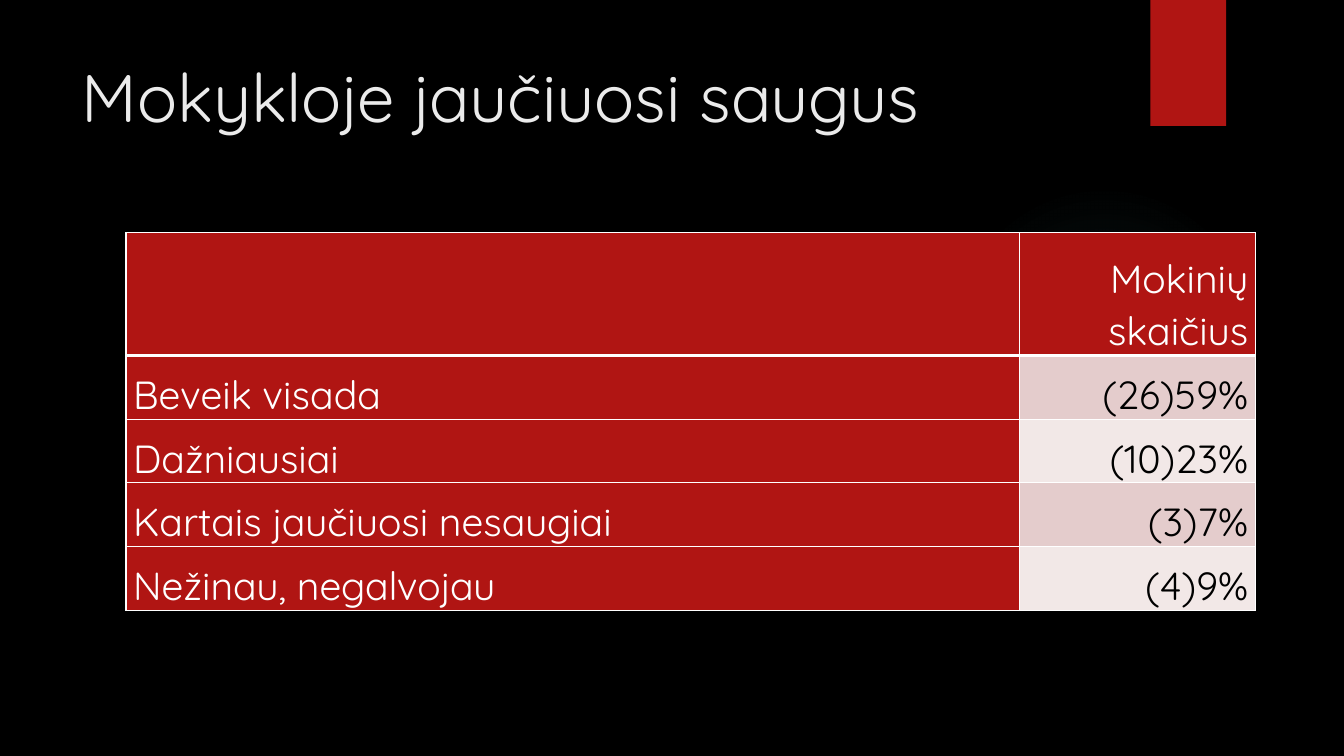
from dataclasses import dataclass

from lxml.etree import SubElement
from pptx import Presentation
from pptx.dml.color import RGBColor
from pptx.enum.shapes import MSO_SHAPE
from pptx.enum.text import MSO_ANCHOR, PP_ALIGN
from pptx.oxml import parse_xml
from pptx.oxml.ns import nsdecls, qn
from pptx.util import Inches, Pt


@dataclass(frozen=True)
class Theme:
    """Colours, type and line sizes of the slide."""
    font: str = "Quicksand"
    background: str = "000000"
    accent: str = "B01513"
    glow: str = "50B9C1"
    title: str = "EBEBEB"
    light: str = "FFFFFF"
    dark: str = "000000"
    bands: tuple = ("E4CCCC", "F2E8E7")
    title_size: int = 48
    table_size: int = 28
    rule: int = 1
    header_rule: int = 3


THEME = Theme()
WIDTH, HEIGHT = Inches(13.33), Inches(7.5)
ANSWERS = (
    ("Beveik visada", "(26)59%"),
    ("Dažniausiai", "(10)23%"),
    ("Kartais jaučiuosi nesaugiai", "(3)7%"),
    ("Nežinau, negalvojau", "(4)9%"),
)


def across(percent):
    """Return a percentage of the slide width."""
    return round(WIDTH * percent / 100)


def down(percent):
    """Return a percentage of the slide height."""
    return round(HEIGHT * percent / 100)


def area(left, top, width, height):
    """Turn percentages of the slide into a position and size."""
    return across(left), down(top), across(width), down(height)


def paint(target, color):
    """Give a shape, cell or background a solid fill."""
    target.fill.solid()
    target.fill.fore_color.rgb = RGBColor.from_string(color)


def write(para, text, size, color):
    """Add one formatted run to a paragraph."""
    span = para.add_run()
    span.text = text
    span.font.name = THEME.font
    span.font.size = Pt(size)
    span.font.color.rgb = RGBColor.from_string(color)


def add_plain_shape(page, kind, place):
    """Add a preset shape without line or shadow."""
    shape = page.shapes.add_shape(kind, *place)
    shape.shadow.inherit = False
    shape.line.fill.background()
    return shape


def add_glow(page, place, stops):
    """Add an ellipse that fades outwards from its centre."""
    glow = add_plain_shape(page, MSO_SHAPE.OVAL, place)
    marks = "".join(
        f'<a:gs pos="{position * 1000}"><a:srgbClr val="{THEME.glow}">'
        f'<a:alpha val="{opacity * 1000}"/></a:srgbClr></a:gs>'
        for position, opacity in stops
    )
    gradient = parse_xml(
        f'<a:gradFill {nsdecls("a")}><a:gsLst>{marks}</a:gsLst><a:path path="circle">'
        '<a:fillToRect l="50000" t="50000" r="50000" b="50000"/></a:path></a:gradFill>'
    )
    glow._element.spPr.find(qn("a:prstGeom")).addnext(gradient)


def add_title(page, place, text):
    """Add the slide heading."""
    box = page.shapes.add_textbox(*place)
    box.text_frame.word_wrap = True
    write(box.text_frame.paragraphs[0], text, THEME.title_size, THEME.title)


def add_borders(cell, top, bottom):
    """Draw the four white edges of a cell."""
    properties = cell._tc.get_or_add_tcPr()
    for side, width in zip("LRTB", (THEME.rule, THEME.rule, top, bottom)):
        edge = SubElement(properties, qn(f"a:ln{side}"), w=str(Pt(width)))
        fill = SubElement(edge, qn("a:solidFill"))
        SubElement(fill, qn("a:srgbClr"), val=THEME.light)


def fill_cell(cell, text, fill, color, align):
    """Set the fill and text of a table cell."""
    paint(cell, fill)
    cell.vertical_anchor = MSO_ANCHOR.BOTTOM
    cell.margin_left = cell.margin_right = Inches(0.07)
    cell.margin_top = cell.margin_bottom = 0
    para = cell.text_frame.paragraphs[0]
    para.alignment = align
    para.line_spacing = 1.07
    para.space_after = Pt(8)
    if text:
        write(para, text, THEME.table_size, color)


def add_answer_table(page, left, top, columns, header_height, row_height):
    """Add the table of answers and pupil counts."""
    rows = (("", "Mokinių skaičius"), *ANSWERS)
    heights = [header_height] + [row_height] * len(ANSWERS)
    place = area(left, top, sum(columns), sum(heights))
    table = page.shapes.add_table(len(rows), len(columns), *place).table
    for column, width in zip(table.columns, columns):
        column.width = across(width)
    for index, (label, count) in enumerate(rows):
        table.rows[index].height = down(heights[index])
        above = THEME.header_rule if index == 1 else THEME.rule
        below = THEME.header_rule if index == 0 else THEME.rule
        for cell in table.rows[index].cells:
            add_borders(cell, above, below)
        fill = THEME.bands[(index - 1) % 2] if index else THEME.accent
        color = THEME.dark if index else THEME.light
        fill_cell(table.cell(index, 0), label, THEME.accent, THEME.light, PP_ALIGN.LEFT)
        fill_cell(table.cell(index, 1), count, fill, color, PP_ALIGN.RIGHT)


def main():
    """Build and save the slide."""
    deck = Presentation()
    deck.slide_width, deck.slide_height = WIDTH, HEIGHT
    page = deck.slides.add_slide(deck.slide_layouts[6])
    paint(page.background, THEME.background)
    add_glow(page, area(70.58, 24.4, 23.1, 41.07), ((0, 7), (36, 6), (69, 0)))
    ribbon = add_plain_shape(page, MSO_SHAPE.RECTANGLE, area(85.6, 0, 5.63, 16.67))
    paint(ribbon, THEME.accent)
    add_title(page, area(5.33, 6.67, 77.2, 20.4), "Mokykloje jaučiuosi saugus")
    add_answer_table(page, 9.38, 30.8, (66.47, 17.55), 16.23, 8.43)
    deck.save("out.pptx")


if __name__ == "__main__":
    main()
